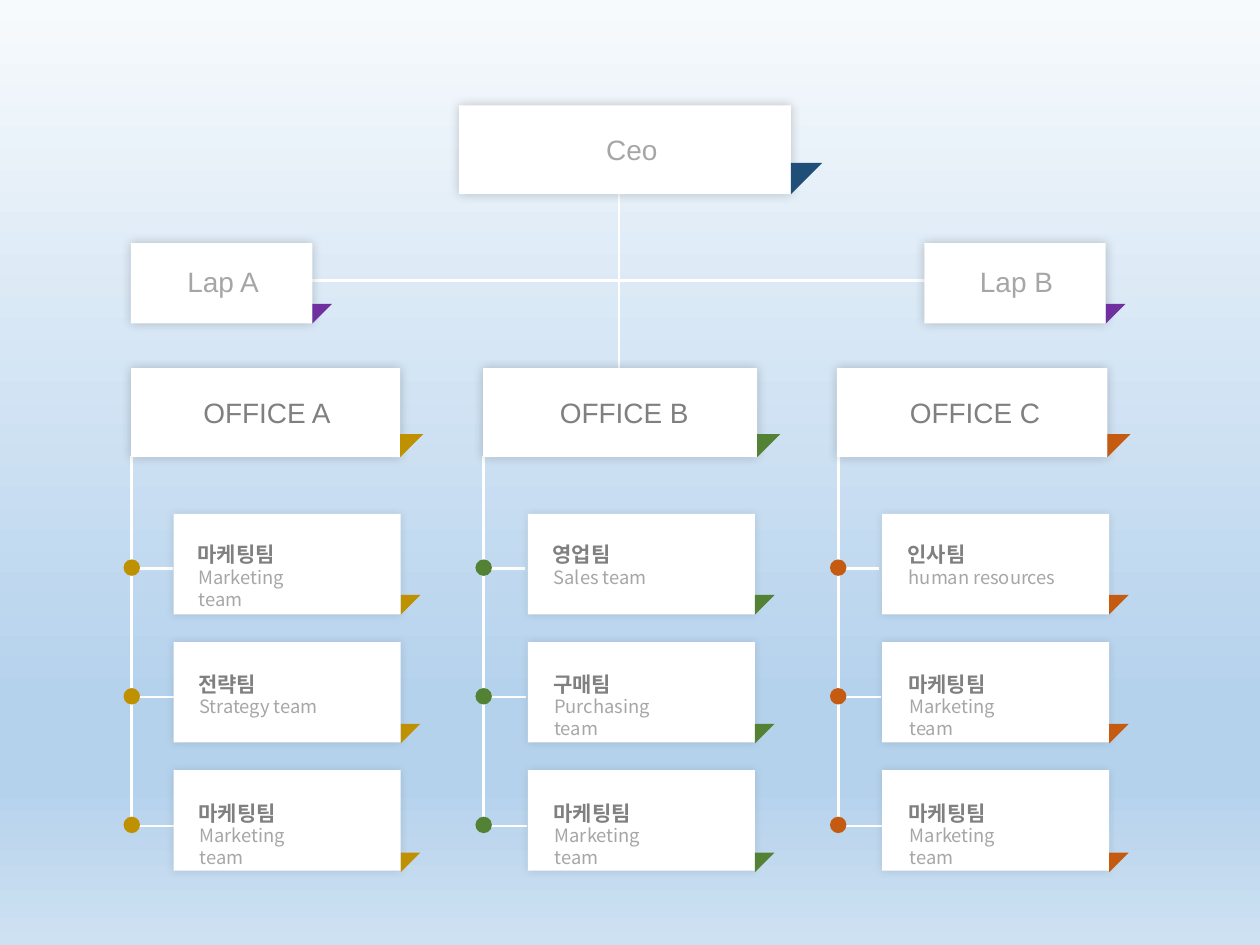
from lxml.etree import SubElement
from pptx import Presentation
from pptx.dml.color import RGBColor
from pptx.enum.shapes import MSO_CONNECTOR as Connector, MSO_SHAPE as Shape
from pptx.enum.text import MSO_AUTO_SIZE as AutoSize, PP_ALIGN as Align
from pptx.oxml.ns import qn
from pptx.util import Pt

COLORS = {
    "white": "FFFFFF", "black": "000000", "navy": "1F4E79", "purple": "7030A0",
    "gold": "BF9000", "green": "548235", "orange": "C55A11",
    "title": "808080", "muted": "A6A6A6",
    "sky_top": "F7FAFD", "sky_mid": "B5D2EC", "sky_end": "CEE1F2",
}
SKY = [(0, "sky_top"), (74, "sky_mid"), (83, "sky_mid"), (100, "sky_end")]
MARKETING = ("마케팅팀", "Marketing team", 90)
OFFICES = [
    {"name": "OFFICE A", "color": "gold", "left": 74.9, "width": 153.8,
     "label": (94.3, 116.6), "trunk": 75.3,
     "teams": [MARKETING, ("전략팀", "Strategy team", 82), MARKETING]},
    {"name": "OFFICE B", "color": "green", "left": 276.1, "width": 156.6,
     "label": (301.7, 110.2), "trunk": 276.4,
     "teams": [("영업팀", "Sales team", 68), ("구매팀", "Purchasing team", 94.5), MARKETING]},
    {"name": "OFFICE C", "color": "orange", "left": 478.2, "width": 154.6,
     "label": (501.8, 110.9), "trunk": 479,
     "teams": [("인사팀", "human resources", 101), MARKETING, MARKETING]},
]
LABS = [("Lap A", 74.8), ("Lap B", 528.2)]


class OrgChart:
    font = "Arial"
    team_font = "Noto Sans CJK KR"
    line_width = 1.5

    def __init__(self, slide):
        self.slide = slide

    def color(self, name):
        return RGBColor.from_string(COLORS[name])

    def background(self, stops):
        fill = self.slide.background.fill
        fill.gradient()
        fill.gradient_angle = 270
        stop_list = next(self.slide.element.iter(qn("a:gsLst")))
        for stop in list(stop_list):
            stop_list.remove(stop)
        for position, name in stops:
            stop = SubElement(stop_list, qn("a:gs"), pos=str(position * 1000))
            SubElement(stop, qn("a:srgbClr"), val=COLORS[name])

    def paint(self, shape, color):
        shape.shadow.inherit = False
        shape.fill.solid()
        shape.fill.fore_color.rgb = self.color(color)
        shape.line.fill.background()

    def line(self, x1, y1, x2, y2):
        line = self.slide.shapes.add_connector(
            Connector.STRAIGHT, Pt(x1), Pt(y1), Pt(x2), Pt(y2))
        line.line.color.rgb = self.color("white")
        line.line.width = Pt(self.line_width)
        SubElement(line.element.spPr, qn("a:effectLst"))

    def card(self, left, top, width, height, opacity=20, blur=6):
        shape = self.slide.shapes.add_shape(
            Shape.RECTANGLE, Pt(left), Pt(top), Pt(width), Pt(height))
        self.paint(shape, "white")
        effects = shape.element.spPr.find(qn("a:effectLst"))
        shadow = SubElement(effects, qn("a:outerShdw"), blurRad=str(Pt(blur)),
                            dist="0", dir="18900000", algn="ctr", rotWithShape="0")
        shade = SubElement(shadow, qn("a:srgbClr"), val=COLORS["black"])
        SubElement(shade, qn("a:alpha"), val=str(opacity * 1000))

    def dot(self, x, y, size, color):
        shape = self.slide.shapes.add_shape(
            Shape.OVAL, Pt(x - size / 2), Pt(y - size / 2), Pt(size), Pt(size))
        self.paint(shape, color)

    def corner(self, left, bottom, size, color):
        top = bottom - size
        builder = self.slide.shapes.build_freeform(Pt(left), Pt(top))
        builder.add_line_segments([(Pt(left + size), Pt(top)), (Pt(left), Pt(bottom))])
        self.paint(builder.convert_to_shape(), color)

    def text(self, words, left, top, width, height, size, color,
             align=Align.LEFT, bold=False, font=None):
        box = self.slide.shapes.add_textbox(Pt(left), Pt(top), Pt(width), Pt(height))
        frame = box.text_frame
        frame.word_wrap = True
        frame.auto_size = AutoSize.SHAPE_TO_FIT_TEXT
        paragraph = frame.paragraphs[0]
        paragraph.text = words
        paragraph.alignment = align
        paragraph.font.name = font or self.font
        paragraph.font.size = Pt(size)
        paragraph.font.bold = bold
        paragraph.font.color.rgb = self.color(color)

    def heading(self, words, left, top, width, color):
        self.text(words, left, top, width, 26.6, 16, color, Align.CENTER)

    def team(self, team, left, row, inset, color):
        title, subtitle, width = team
        self.card(left, 293.7 + 73.2 * row, 129.8, 57.4, opacity=9, blur=5)
        self.corner(left + 129.8, 351.2 + 73.6 * row, 11.2, color)
        text_left = left + inset + 0.3 * row
        text_top = 306 + 73.9 * row
        self.text(title, text_left, text_top, 64, 21.8, 12, "title", bold=True)
        self.text(subtitle, text_left + 0.7, text_top + 13.8, width, 20, 10.5,
                  "muted", font=self.team_font)

    def office(self, office, column):
        trunk, color = office["trunk"], office["color"]
        team_left = 99.2 + 202.4 * column
        self.line(trunk, 260.6, trunk, 473)
        for row, team in enumerate(office["teams"]):
            branch_left = trunk - 0.5 + 0.7 * row
            branch_y = 324.7 + 73.7 * row
            self.line(branch_left, branch_y, branch_left + 24, branch_y)
            self.dot(trunk, 324.4 + 73.5 * row, 9.4, color)
            self.team(team, team_left, row, 6.6 + 0.5 * column, color)
        self.card(office["left"], 210.4, office["width"], 50.9)
        self.corner(office["left"] + office["width"], 261.3, 13.2, color)
        label_left, label_width = office["label"]
        self.heading(office["name"], label_left, 222.5, label_width, "title")

    def lab(self, name, left):
        self.card(left, 139, 103.7, 45.8)
        self.corner(left + 103.7, 184.9, 11.2, "purple")
        self.heading(name, left + 8, 147.9, 89.3, "muted")


def main():
    presentation = Presentation()
    presentation.slide_width = Pt(720)
    presentation.slide_height = Pt(540)
    chart = OrgChart(presentation.slides.add_slide(presentation.slide_layouts[6]))
    chart.background(SKY)
    chart.line(353.7, 106.6, 353.7, 222.5)
    chart.line(174.2, 160.4, 552.2, 160.4)
    chart.card(262.3, 60.2, 189.6, 50.8)
    chart.corner(451.9, 111, 17.9, "navy")
    chart.heading("Ceo", 316.4, 72, 89.3, "muted")
    for column, office in enumerate(OFFICES):
        chart.office(office, column)
    for name, left in LABS:
        chart.lab(name, left)
    presentation.save("out.pptx")


if __name__ == "__main__":
    main()
